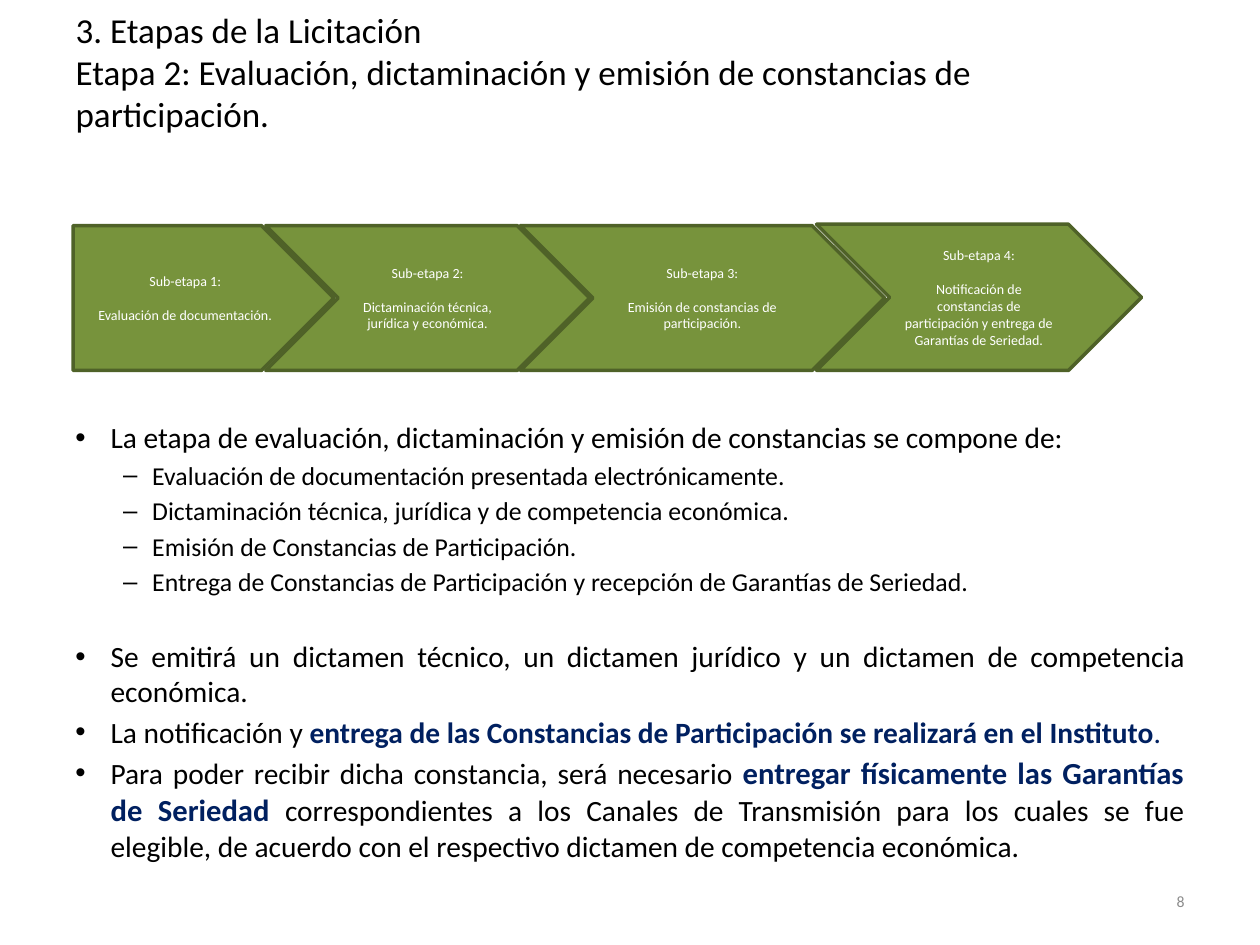
from lxml.etree import SubElement
from pptx import Presentation
from pptx.dml.color import RGBColor
from pptx.enum.shapes import MSO_SHAPE as Shape
from pptx.enum.text import MSO_ANCHOR as Anchor, MSO_AUTO_SIZE as AutoSize, PP_ALIGN as Align
from pptx.oxml.ns import qn
from pptx.util import Pt

PX = 9144
BLACK = RGBColor(0x00, 0x00, 0x00)
WHITE = RGBColor(0xFF, 0xFF, 0xFF)
GRAY = RGBColor(0x8C, 0x8C, 0x8C)
NAVY = RGBColor(0x00, 0x20, 0x60)
GREEN = RGBColor(0x77, 0x93, 0x3C)
DARK_GREEN = RGBColor(0x4F, 0x62, 0x28)
FONT = "Calibri"

TITLE = ("3. Etapas de la Licitación\vEtapa 2: Evaluación, dictaminación y emisión "
         "de constancias de participación.")

STAGES = [
    (3, Shape.CHEVRON, (355, 1, 289, 115), "Emisión de constancias de participación."),
    (1, Shape.PENTAGON, (0, 1, 207, 115), "Evaluación de documentación."),
    (4, Shape.CHEVRON, (590, 0, 258, 116),
     "Notificación de constancias de participación y entrega de Garantías de Seriedad."),
    (2, Shape.CHEVRON, (153, 1, 257, 115), "Dictaminación técnica, jurídica y económica."),
]

POINT = dict(size=16.8, bullet="•", left=28, hanging=28, before=2.9)
SUBPOINT = dict(size=14.7, bullet="–", left=61, hanging=23, before=2.6, level=1)
KEY = dict(color=NAVY, bold=True)

BODY = [
    (["La etapa de evaluación, dictaminación y emisión de constancias se compone de:"],
     POINT | dict(before=0)),
    (["Evaluación de documentación presentada electrónicamente."], SUBPOINT),
    (["Dictaminación técnica, jurídica y de competencia económica."], SUBPOINT),
    (["Emisión de Constancias de Participación."], SUBPOINT),
    (["Entrega de Constancias de Participación y recepción de Garantías de Seriedad."], SUBPOINT),
    (["Se emitirá un dictamen técnico, un dictamen jurídico y un dictamen de competencia económica."],
     POINT | dict(before=23.7)),
    (["La notificación y ",
      ("entrega de las Constancias de Participación se realizará en el Instituto", KEY),
      (".", dict(color=NAVY))], POINT),
    (["Para poder recibir dicha constancia, será necesario ",
      ("entregar físicamente las Garantías de Seriedad", KEY | dict(size=17.5)),
      " correspondientes a los Canales de Transmisión para los cuales se fue elegible, "
      "de acuerdo con el respectivo dictamen de competencia económica."], POINT),
]


def place(shape, box):
    shape.left, shape.top, shape.width, shape.height = (value * PX for value in box)


def prepare_frame(shape, anchor):
    frame = shape.text_frame
    frame.word_wrap = True
    frame.auto_size = AutoSize.NONE
    frame.vertical_anchor = anchor
    return frame


def add_bullet(paragraph, character, left, hanging):
    properties = paragraph._p.get_or_add_pPr()
    properties.set("marL", str(left * PX))
    properties.set("indent", str(-hanging * PX))
    SubElement(properties, qn("a:buFont"), typeface="Arial")
    SubElement(properties, qn("a:buChar"), char=character)


def write(paragraph, text, size=16.8, color=BLACK, bold=False, align=Align.LEFT,
          before=0, level=0, bullet=None, left=0, hanging=0):
    paragraph.alignment = align
    paragraph.level = level
    paragraph.space_before = Pt(before)
    if bullet:
        add_bullet(paragraph, bullet, left, hanging)
    pieces = [text] if isinstance(text, str) else text
    for piece in pieces:
        words, style = (piece, {}) if isinstance(piece, str) else piece
        for index, line in enumerate(words.split("\v")):
            if index:
                paragraph.add_line_break()
            run = paragraph.add_run()
            run.text = line
            run.font.name = FONT
            run.font.size = Pt(style.get("size", size))
            run.font.bold = style.get("bold", bold)
            run.font.color.rgb = style.get("color", color)


def add_title(slide, box):
    title = slide.shapes.title
    place(title, box)
    write(prepare_frame(title, Anchor.MIDDLE).paragraphs[0], TITLE, size=20)


def add_stage(slide, number, kind, box, description):
    shape = slide.shapes.add_shape(kind, *(value * PX for value in box))
    shape.name = f"Sub-etapa {number}"
    shape.shadow.inherit = False
    shape.fill.solid()
    shape.fill.fore_color.rgb = GREEN
    shape.line.color.rgb = DARK_GREEN
    shape.line.width = Pt(2)
    frame = prepare_frame(shape, Anchor.MIDDLE)
    style = dict(size=8, color=WHITE, align=Align.CENTER)
    write(frame.paragraphs[0], f"Sub-etapa {number}:", **style)
    write(frame.add_paragraph(), description, before=9.8, **style)


def add_process(slide, left, top):
    for number, kind, (x, y, width, height), description in STAGES:
        add_stage(slide, number, kind, (left + x, top + y, width, height), description)


def add_body(slide, box):
    shape = slide.shapes.add_textbox(*(value * PX for value in box))
    frame = prepare_frame(shape, Anchor.TOP)
    for index, (text, style) in enumerate(BODY):
        paragraph = frame.add_paragraph() if index else frame.paragraphs[0]
        write(paragraph, text, align=Align.JUSTIFY, **style)


def add_page_number(slide, box):
    shape = slide.shapes.add_textbox(*(value * PX for value in box))
    frame = prepare_frame(shape, Anchor.MIDDLE)
    write(frame.paragraphs[0], "8", size=9, color=GRAY, align=Align.RIGHT)


def main():
    presentation = Presentation()
    presentation.slide_width = 1000 * PX
    presentation.slide_height = 750 * PX
    slide = presentation.slides.add_slide(presentation.slide_layouts[5])
    add_title(slide, (50, -6, 785, 125))
    add_body(slide, (50, 328, 900, 332))
    add_page_number(slide, (717, 695, 233, 40))
    add_process(slide, 58, 178)
    presentation.save("out.pptx")


if __name__ == "__main__":
    main()
